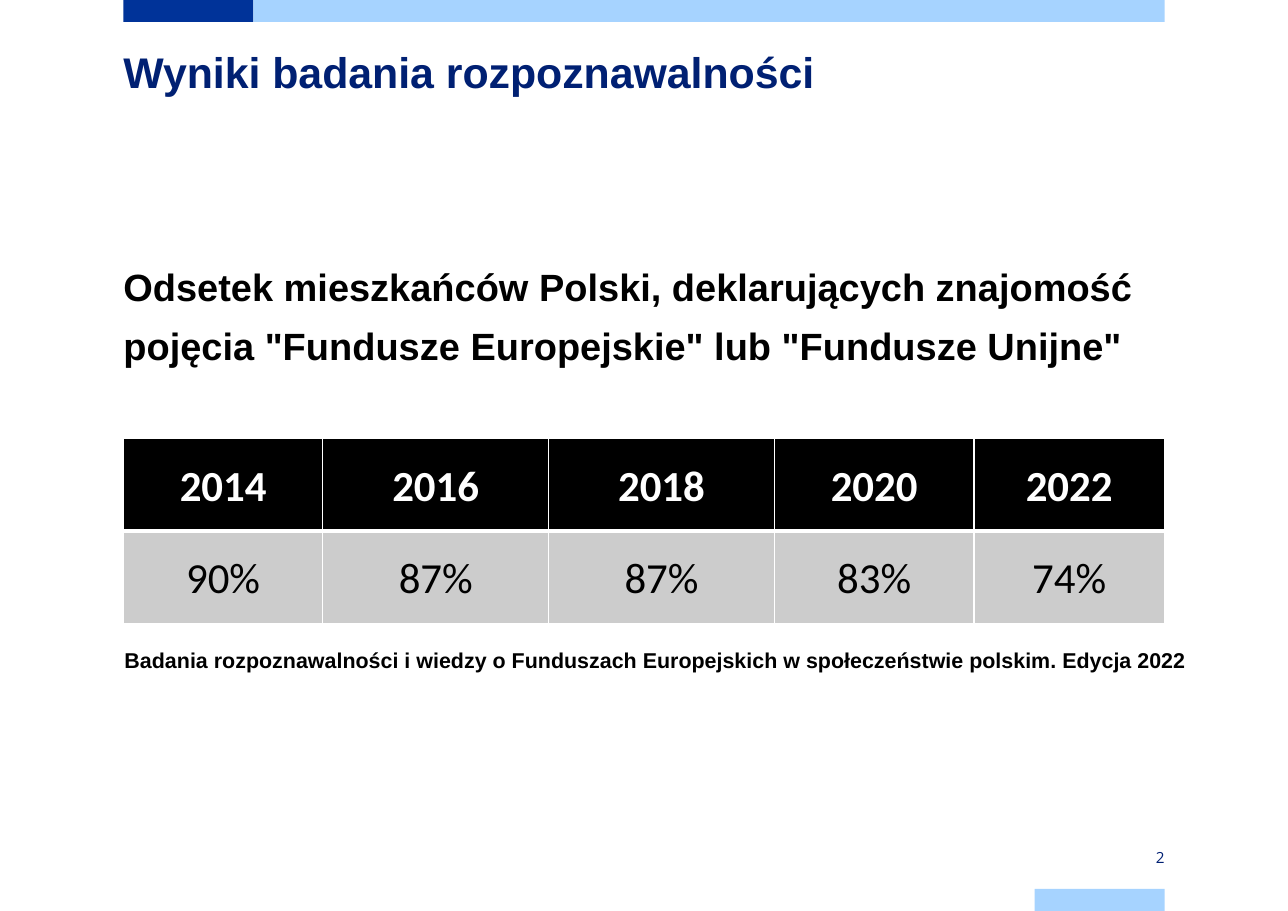
from dataclasses import dataclass

from lxml.etree import SubElement
from pptx import Presentation
from pptx.dml.color import RGBColor
from pptx.enum.shapes import MSO_SHAPE
from pptx.enum.text import MSO_ANCHOR, PP_ALIGN
from pptx.oxml.ns import qn
from pptx.util import Inches, Pt


@dataclass(frozen=True)
class Theme:
    """Colours, fonts and type sizes of the deck."""
    navy: str = "002073"
    blue: str = "003399"
    sky: str = "A6D3FF"
    black: str = "000000"
    grey: str = "CCCCCC"
    white: str = "FFFFFF"
    text_font: str = "Arial"
    table_font: str = "Calibri"
    number_font: str = "Open Sans"
    large: float = 28
    lead: float = 24.8
    note: float = 14
    number: float = 10


THEME = Theme()
LEFT, WIDTH, TAB = 1.12, 9.45, 1.18
RIGHT = LEFT + WIDTH
RESULTS = {"2014": "90%", "2016": "87%", "2018": "87%", "2020": "83%", "2022": "74%"}
COLUMN_WIDTHS = [1.81, 2.05, 2.05, 1.81, 1.73]
ROW_HEIGHT = 0.84


def write(frame, text, size, font=THEME.text_font, color=THEME.black, bold=True,
          align=PP_ALIGN.LEFT, anchor=MSO_ANCHOR.TOP, spacing=None, margins=(0, 0, 0, 0)):
    """Put one formatted paragraph into a text frame."""
    frame.word_wrap = True
    frame.vertical_anchor = anchor
    frame.margin_left, frame.margin_top, frame.margin_right, frame.margin_bottom = map(Inches, margins)
    para = frame.paragraphs[0]
    para.alignment = align
    para.line_spacing = spacing
    span = para.add_run()
    span.text = text
    span.font.name = font
    span.font.size = Pt(size)
    span.font.bold = bold
    span.font.color.rgb = RGBColor.from_string(color)


def add_bar(page, left, top, width, color):
    """Draw a plain decorative bar."""
    bar = page.shapes.add_shape(MSO_SHAPE.RECTANGLE, Inches(left), Inches(top), Inches(width), Inches(0.2))
    bar.shadow.inherit = False
    bar.fill.solid()
    bar.fill.fore_color.rgb = RGBColor.from_string(color)
    bar.line.fill.background()


def add_title(page, text):
    """Place and fill the title placeholder."""
    title = page.shapes.title
    title.left, title.top, title.width, title.height = map(Inches, (LEFT, 0.38, WIDTH, 1.18))
    write(title.text_frame, text, THEME.large, color=THEME.navy, spacing=Pt(36))


def add_text(page, text, left, top, width, height, **style):
    """Add a text box with one paragraph."""
    box = page.shapes.add_textbox(Inches(left), Inches(top), Inches(width), Inches(height))
    write(box.text_frame, text, **style)


def set_borders(cell, widths):
    """Give a cell white borders: left, right, top, bottom in points."""
    properties = cell._tc.get_or_add_tcPr()
    for index, (side, width) in enumerate(zip("LRTB", widths)):
        line = properties.makeelement(qn(f"a:ln{side}"), {"w": str(Pt(width))})
        fill = SubElement(line, qn("a:solidFill"))
        SubElement(fill, qn("a:srgbClr"), val=THEME.white)
        properties.insert(index, line)


def add_results(page):
    """Add the table of years and shares."""
    rows = [
        (RESULTS.keys(), THEME.black, THEME.white, True, (1, 1, 1, 3)),
        (RESULTS.values(), THEME.grey, THEME.black, False, (1, 1, 3, 1)),
    ]
    frame = page.shapes.add_table(len(rows), len(RESULTS), Inches(LEFT), Inches(3.98),
                                  Inches(WIDTH), Inches(ROW_HEIGHT * len(rows)))
    table = frame.table
    table.horz_banding = False
    for column, width in zip(table.columns, COLUMN_WIDTHS):
        column.width = Inches(width)
    for row, (values, fill, color, bold, borders) in zip(table.rows, rows):
        row.height = Inches(ROW_HEIGHT)
        for cell, value in zip(row.cells, values):
            cell.fill.solid()
            cell.fill.fore_color.rgb = RGBColor.from_string(fill)
            write(cell.text_frame, value, THEME.large, font=THEME.table_font, color=color,
                  bold=bold, align=PP_ALIGN.CENTER, spacing=1.07)
            cell.vertical_anchor = MSO_ANCHOR.MIDDLE
            cell.margin_left = cell.margin_right = Inches(0.03)
            cell.margin_top = cell.margin_bottom = 0
            set_borders(cell, borders)


def main():
    """Build the slide and save the deck."""
    deck = Presentation()
    deck.slide_width, deck.slide_height = Inches(11.69), Inches(8.27)
    page = deck.slides.add_slide(deck.slide_layouts[5])
    add_bar(page, LEFT, 0, TAB, THEME.blue)
    add_bar(page, LEFT + TAB, 0, WIDTH - TAB, THEME.sky)
    add_bar(page, RIGHT - TAB, 8.07, TAB, THEME.sky)
    add_title(page, "Wyniki badania rozpoznawalności")
    add_text(page, 'Odsetek mieszkańców Polski, deklarujących znajomość pojęcia '
             '"Fundusze Europejskie" lub "Fundusze Unijne"',
             LEFT, 2.27, WIDTH, 1.55, size=THEME.lead, spacing=1.3)
    add_results(page)
    add_text(page, "Badania rozpoznawalności i wiedzy o Funduszach Europejskich "
             "w społeczeństwie polskim. Edycja 2022",
             1.13, 5.77, 9.69, 0.87, size=THEME.note, spacing=Pt(24))
    add_text(page, "2", RIGHT - TAB, 7.68, TAB, 0.2, size=THEME.number, font=THEME.number_font,
             color=THEME.navy, bold=False, align=PP_ALIGN.RIGHT, anchor=MSO_ANCHOR.MIDDLE,
             margins=(0, 0.08, 0, 0.08))
    deck.save("out.pptx")


if __name__ == "__main__":
    main()
